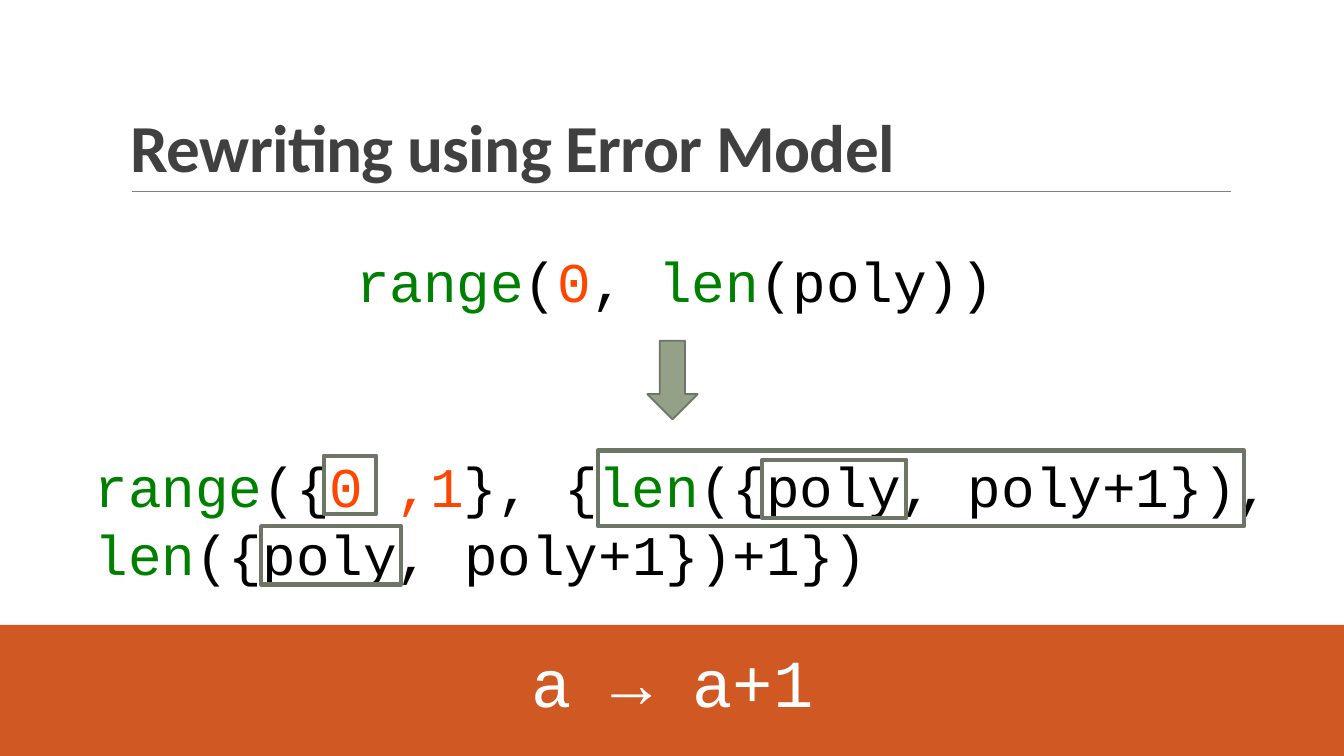
from pptx import Presentation
from pptx import util as u
from pptx.dml.color import RGBColor
from pptx.enum import shapes, text
from pptx.oxml.ns import qn
from lxml import etree

SCALE = 9144  # EMU in one px, 100 px to the inch
COLORS = {
    "title": "404040", "rule": "808080", "banner": "CF5823",
    "arrow": "94A088", "outline": "6D7665", "white": "FFFFFF",
    "plain": "000000", "function": "008000", "number": "FF4500",
}

deck = Presentation()
deck.slide_width, deck.slide_height = 1333 * SCALE, 750 * SCALE
page = deck.slides.add_slide(deck.slide_layouts[6])


def add_text(bounds, spans, font, align, anchor=text.MSO_ANCHOR.MIDDLE):
    """Add a one-paragraph text box from (words, colour name) spans; return the paragraph."""
    box = page.shapes.add_textbox(*(n * SCALE for n in bounds))
    box.text_frame.word_wrap = True
    box.text_frame.vertical_anchor = anchor
    para = box.text_frame.paragraphs[0]
    para.alignment = align
    for words, color in spans:
        span = para.add_run()
        span.text = words
        for name, value in font.items():
            setattr(span.font, name, value)
        span.font.color.rgb = RGBColor.from_string(COLORS[color])
    return para


def add_block(kind, bounds, fill=None, line=None, weight=0):
    block = page.shapes.add_shape(kind, *(n * SCALE for n in bounds))
    block.shadow.inherit = False
    if fill:
        block.fill.solid()
        block.fill.fore_color.rgb = RGBColor.from_string(COLORS[fill])
    else:
        block.fill.background()
    if line:
        block.line.color.rgb = RGBColor.from_string(COLORS[line])
        block.line.width = u.Pt(weight)
    else:
        block.line.fill.background()


# Title and the rule under it
rule = page.shapes.add_connector(
    shapes.MSO_CONNECTOR.STRAIGHT, *(n * SCALE for n in (131, 190, 1221, 190)))
rule.line.color.rgb = RGBColor.from_string(COLORS["rule"])
rule.line.width = u.Pt(0.5)
etree.SubElement(rule._element.spPr, qn("a:effectLst"))

title = add_text((120, 31, 1100, 159), [("Rewriting using Error Model", "title")],
                 {"name": "Calibri", "size": u.Pt(48), "bold": True},
                 text.PP_ALIGN.LEFT, text.MSO_ANCHOR.BOTTOM)
title.line_spacing = 0.85
title.runs[0].font._element.set("spc", "-50")

# Banner with the rewrite rule
code = {"name": "Courier New", "size": u.Pt(40)}
add_block(shapes.MSO_SHAPE.RECTANGLE, (0, 620, 1333, 131), fill="banner")
add_text((114, 630, 1106, 90), [("a → a+1", "white")],
         {**code, "size": u.Pt(48)}, text.PP_ALIGN.CENTER)

# Expression before and after rewriting
add_text((264, 241, 811, 73), [
    ("range", "function"), ("(", "plain"), ("0", "number"), (", ", "plain"),
    ("len", "function"), ("(poly))", "plain"),
], code, text.PP_ALIGN.CENTER)
add_text((84, 445, 1216, 140), [
    ("range", "function"), ("({", "plain"), ("0 ,1", "number"), ("}, {", "plain"),
    ("len", "function"), ("({poly, poly+1}), ", "plain"),
    ("len", "function"), ("({poly, poly+1})+1})", "plain"),
], code, text.PP_ALIGN.LEFT)

add_block(shapes.MSO_SHAPE.DOWN_ARROW, (642, 338, 50, 78), "arrow", "outline", 1.25)

# Frames around the rewritten parts
for frame in ((321, 452, 52, 58), (756, 456, 143, 58),
              (259, 522, 139, 58), (593, 447, 641, 75)):
    add_block(shapes.MSO_SHAPE.RECTANGLE, frame, line="outline", weight=3)

deck.save("out.pptx")
